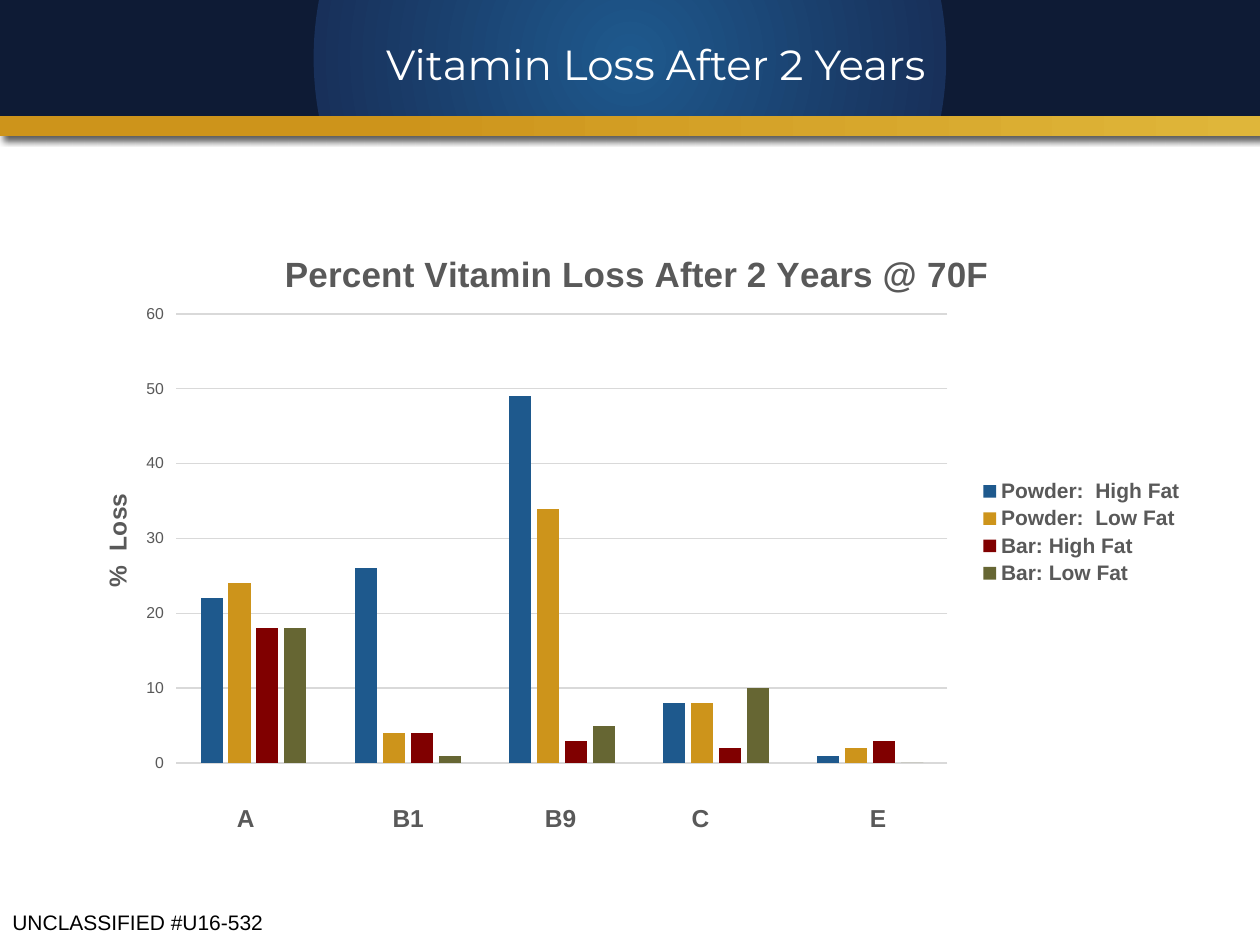
from typing import NamedTuple

from lxml.etree import SubElement
from pptx import Presentation
from pptx.chart.data import CategoryChartData
from pptx.dml.color import RGBColor
from pptx.enum.chart import XL_CHART_TYPE as ChartType
from pptx.enum.chart import XL_LEGEND_POSITION as LegendPosition
from pptx.enum.chart import XL_TICK_MARK as TickMark
from pptx.enum.shapes import MSO_SHAPE as ShapeType
from pptx.enum.text import MSO_ANCHOR as Anchor
from pptx.enum.text import PP_ALIGN as Align
from pptx.oxml import parse_xml
from pptx.oxml.ns import nsdecls, qn
from pptx.util import Inches, Pt

WHITE = RGBColor(0xFF, 0xFF, 0xFF)
BLACK = RGBColor(0x00, 0x00, 0x00)
GREY = RGBColor(0x59, 0x59, 0x59)
GRID = RGBColor(0xD9, 0xD9, 0xD9)
BLUE = RGBColor(0x1E, 0x59, 0x8D)
INDIGO = RGBColor(0x18, 0x30, 0x5A)
NAVY = RGBColor(0x0E, 0x1B, 0x35)
GOLD = RGBColor(0xCD, 0x94, 0x1B)
LIGHT_GOLD = RGBColor(0xDF, 0xB6, 0x3A)
RED = RGBColor(0x80, 0x00, 0x00)
OLIVE = RGBColor(0x66, 0x66, 0x33)

LINEAR = '<a:lin ang="10800000" scaled="0"/>'
RADIAL = ('<a:path path="circle"><a:fillToRect l="50000" t="50000" '
          'r="50000" b="50000"/></a:path>')
SHADOW = ('<a:outerShdw {} blurRad="50800" dist="38100" dir="2700000" algn="tl" '
          'rotWithShape="0"><a:srgbClr val="000000"><a:alpha val="64000"/>'
          '</a:srgbClr></a:outerShdw>')


class Band(NamedTuple):
    top: float
    height: float
    stops: tuple
    direction: str
    shadow: bool


class Label(NamedTuple):
    text: str
    box: tuple
    size: int
    color: RGBColor
    font: str = "Arial"
    bold: bool = False
    align: Align = Align.CENTER
    anchor: Anchor = Anchor.MIDDLE


class Series(NamedTuple):
    name: str
    values: tuple
    color: RGBColor


BANDS = (
    Band(0.83, 0.25, ((0, LIGHT_GOLD), (70, GOLD)), LINEAR, True),
    Band(0, 0.92, ((0, BLUE), (50, INDIGO), (50, NAVY)), RADIAL, False),
)
SERIES = (
    Series("Powder:  High Fat", (22, 26, 49, 8, 1), BLUE),
    Series("Powder:  Low Fat", (24, 4, 34, 8, 2), GOLD),
    Series("Bar: High Fat", (18, 4, 3, 2, 3), RED),
    Series("Bar: Low Fat", (18, 1, 5, 10, 0), OLIVE),
)
VITAMINS = (("A", 1.95), ("B1", 3.24), ("B9", 4.45), ("C", 5.56), ("E", 6.97))


def set_font(font, size: int, color: RGBColor, bold: bool = False,
             name: str = "Arial") -> None:
    formats = {"size": Pt(size), "bold": bold, "name": name}
    for attribute, value in formats.items():
        setattr(font, attribute, value)
    font.color.rgb = color


def draw_band(slide, band: Band) -> None:
    shape = slide.shapes.add_shape(ShapeType.RECTANGLE, 0, Inches(band.top),
                                   Inches(10), Inches(band.height))
    shape.shadow.inherit = False
    shape.line.fill.background()
    shape.fill.gradient()
    stops = "".join(f'<a:gs pos="{position * 1000}"><a:srgbClr val="{color}"/></a:gs>'
                    for position, color in band.stops)
    gradient = parse_xml(f'<a:gradFill {nsdecls("a")} rotWithShape="1"><a:gsLst>{stops}'
                         f'</a:gsLst>{band.direction}</a:gradFill>')
    properties = shape._element.spPr
    properties.replace(properties.find(qn("a:gradFill")), gradient)
    if band.shadow:
        effects = properties.find(qn("a:effectLst"))
        effects.append(parse_xml(SHADOW.format(nsdecls("a"))))


def draw_label(slide, label: Label) -> None:
    shape = slide.shapes.add_textbox(*map(Inches, label.box))
    frame = shape.text_frame
    frame.word_wrap = True
    frame.vertical_anchor = label.anchor
    paragraph = frame.paragraphs[0]
    paragraph.alignment = label.align
    run = paragraph.add_run()
    run.text = label.text
    set_font(run.font, label.size, label.color, label.bold, label.font)


def write_title(title, text: str, size: int) -> None:
    paragraph = title.text_frame.paragraphs[0]
    run = paragraph.add_run()
    run.text = text
    set_font(run.font, size, GREY, True)


def place(element, **positions: float) -> None:
    for old in element.findall(qn("c:layout")):
        element.remove(old)
    layout = parse_xml(f'<c:layout {nsdecls("c")}/>')
    manual = SubElement(layout, qn("c:manualLayout"))
    if "w" in positions:
        SubElement(manual, qn("c:layoutTarget")).set("val", "inner")
    for mode in ("xMode", "yMode"):
        SubElement(manual, qn(f"c:{mode}")).set("val", "edge")
    for key, value in positions.items():
        SubElement(manual, qn(f"c:{key}")).set("val", str(value))
    text = element.find(qn("c:tx"))
    element.insert(0 if text is None else 1, layout)


def draw_chart(slide) -> None:
    data = CategoryChartData()
    data.categories = [str(number + 1) for number in range(len(VITAMINS))]
    for series in SERIES:
        data.add_series(series.name, series.values)
    chart = slide.shapes.add_chart(ChartType.COLUMN_CLUSTERED, Inches(0.5), Inches(1.75),
                                   Inches(9), Inches(4.95), data).chart
    set_font(chart.font, 10, BLACK)
    write_title(chart.chart_title, "Percent Vitamin Loss After 2 Years @ 70F", 20)
    chart.chart_title.include_in_layout = False
    place(chart.chart_title._element, x=0.19, y=0.04)
    place(chart._chartSpace.chart.plotArea, x=0.1, y=0.15, w=0.68, h=0.72)

    plot = chart.plots[0]
    for attribute, value in {"gap_width": 219, "overlap": -27,
                             "vary_by_categories": False}.items():
        setattr(plot, attribute, value)
    for drawn, series in zip(plot.series, SERIES):
        drawn.format.fill.solid()
        drawn.format.fill.fore_color.rgb = series.color

    chart.category_axis.visible = False
    axis = chart.value_axis
    for attribute, value in {"minimum_scale": 0, "maximum_scale": 60, "major_unit": 10,
                             "major_tick_mark": TickMark.OUTSIDE}.items():
        setattr(axis, attribute, value)
    set_font(axis.tick_labels.font, 9, GREY)
    axis.format.line.fill.background()
    grid_line = axis.major_gridlines.format.line
    grid_line.color.rgb = GRID
    grid_line.width = Pt(0.75)
    write_title(axis.axis_title, "%  Loss", 14)
    axis.axis_title._element.find(".//" + qn("a:bodyPr")).set("rot", "-5400000")
    place(axis.axis_title._element, x=0.03, y=0.43)

    chart.has_legend = True
    chart.legend.position = LegendPosition.RIGHT
    chart.legend.include_in_layout = False
    set_font(chart.legend.font, 12, GREY, True)


def main() -> None:
    presentation = Presentation()
    presentation.slide_width = Inches(10)
    presentation.slide_height = Inches(7.5)
    slide = presentation.slides.add_slide(presentation.slide_layouts[6])
    for band in BANDS:
        draw_band(slide, band)
    draw_label(slide, Label("Vitamin Loss After 2 Years", (1.83, 0.17, 6.75, 0.67),
                            24, WHITE, "Montserrat"))
    draw_chart(slide)
    for name, center in VITAMINS:
        draw_label(slide, Label(name, (center - 0.3, 6.3, 0.6, 0.38), 14, GREY, bold=True))
    draw_label(slide, Label("UNCLASSIFIED #U16-532", (0, 7.17, 2.33, 0.4), 12, BLACK,
                            align=Align.LEFT, anchor=Anchor.TOP))
    presentation.save("out.pptx")


if __name__ == "__main__":
    main()
